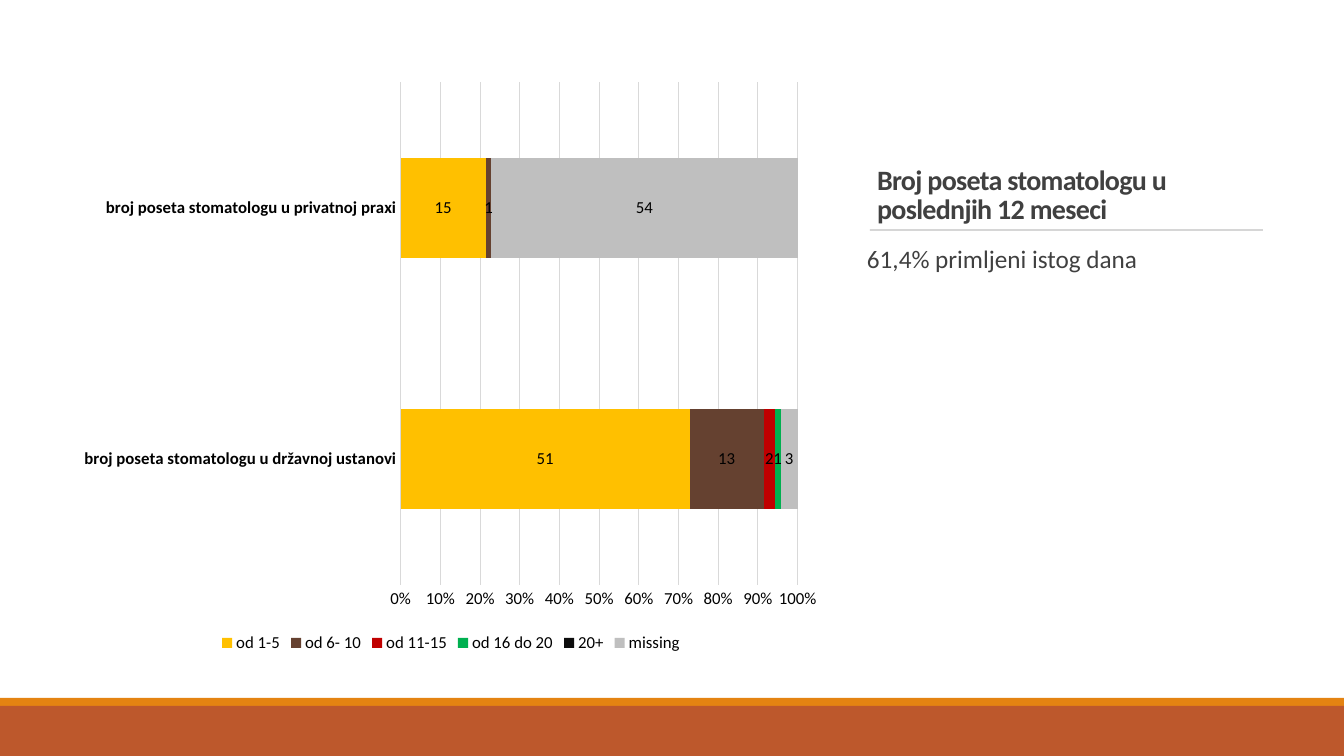
from dataclasses import dataclass
from lxml.etree import SubElement
from pptx import Presentation
from pptx.chart.data import CategoryChartData
from pptx.dml.color import RGBColor
from pptx.enum.chart import (XL_CHART_TYPE, XL_LABEL_POSITION,
                             XL_LEGEND_POSITION, XL_TICK_MARK)
from pptx.enum.shapes import MSO_CONNECTOR, MSO_SHAPE
from pptx.enum.text import MSO_ANCHOR, MSO_AUTO_SIZE, PP_ALIGN
from pptx.oxml.ns import qn
from pptx.util import Emu, Pt

# Content
TITLE = "Broj poseta stomatologu u poslednjih 12 meseci"
BODY = "61,4% primljeni istog dana"
CATS = ["broj poseta stomatologu u državnoj ustanovi",
        "broj poseta stomatologu u privatnoj praxi"]
SERIES = [
    ("od 1-5", (51, 15), "FFC000"),
    ("od 6- 10", (13, 1), "654130"),
    ("od 11-15", (2, None), "C00000"),
    ("od 16 do 20", (1, None), "00B050"),
    ("20+", (None, None), "0D0D0D"),
    ("missing", (3, 54), "BFBFBF"),
]

# Places in px: left, top, width, height
WIDE, HIGH = 1344, 756
TITLE_BOX = (867, 70, 407, 160)
BODY_BOX = (867, 242, 407, 404)
CHART_BOX = (70, 71, 762, 586)
PLOT_BOX = (401, 82, 397, 503)
RULE = (870, 230, 1263, 230)
BANDS = [(698, 8, "E48312"), (706, 50, "BD582C")]


@dataclass(frozen=True)
class Theme:
    font: str = "Calibri"
    text: str = "404040"
    label: str = "000000"
    grid: str = "D9D9D9"
    rule: str = "808080"
    title: int = 20
    body: int = 18
    small: int = 12


THEME = Theme()


def px(n):
    return Emu(round(n * 914400 / 100.8))


def rgb(code):
    return RGBColor.from_string(code)


def style(font, size, color, bold=False):
    font.name, font.size, font.bold = THEME.font, Pt(size), bold
    font.color.rgb = rgb(color)


def place(shape, box):
    shape.left, shape.top, shape.width, shape.height = map(px, box)


def write(shape, box, text, size, bold, space):
    place(shape, box)
    frame = shape.text_frame
    frame.text = text
    frame.word_wrap = True
    frame.auto_size = MSO_AUTO_SIZE.NONE
    para = frame.paragraphs[0]
    para.alignment = PP_ALIGN.LEFT
    para.line_spacing = space
    para.space_before = Pt(0)
    style(para.font, size, THEME.text, bold)
    return frame, para


def add_title(slide):
    frame, para = write(slide.shapes.title, TITLE_BOX, TITLE,
                        THEME.title, True, 0.85)
    frame.vertical_anchor = MSO_ANCHOR.BOTTOM
    para.runs[0]._r.get_or_add_rPr().set("spc", "-50")


def add_body(slide):
    frame, para = write(slide.placeholders[1], BODY_BOX, BODY,
                        THEME.body, False, 0.9)
    frame.vertical_anchor = MSO_ANCHOR.TOP
    frame.margin_left = frame.margin_right = 0
    para.space_after = Pt(6)
    props = para._p.get_or_add_pPr()
    props.set("marL", "0")
    props.set("indent", "0")
    bullet = SubElement(props, qn("a:buNone"))
    props.remove(bullet)
    props.insert_element_before(bullet, "a:tabLst", "a:defRPr", "a:extLst")


def add_rule(slide):
    rule = slide.shapes.add_connector(MSO_CONNECTOR.STRAIGHT, *map(px, RULE))
    rule.line.width = Pt(0.5)
    rule.line.color.rgb = rgb(THEME.rule)
    tint = rule.line._ln.find(".//" + qn("a:srgbClr"))
    SubElement(tint, qn("a:alpha")).set("val", "90000")
    SubElement(rule._element.spPr, qn("a:effectLst"))


def add_bands(slide):
    for top, high, color in BANDS:
        band = slide.shapes.add_shape(MSO_SHAPE.RECTANGLE,
                                      *map(px, (0, top, WIDE, high)))
        band.shadow.inherit = False
        band.fill.solid()
        band.fill.fore_color.rgb = rgb(color)
        band.line.fill.background()


def set_plot(chart):
    # Inner plot area as shares of the chart box
    left, top, wide, high = CHART_BOX
    x, y, w, h = PLOT_BOX
    area = chart._chartSpace.chart.plotArea
    old = area.find(qn("c:layout"))
    if old is not None:
        area.remove(old)
    layout = SubElement(area, qn("c:layout"))
    area.insert(0, layout)
    manual = SubElement(layout, qn("c:manualLayout"))
    for tag, val in [("layoutTarget", "inner"), ("xMode", "edge"),
                     ("yMode", "edge"), ("x", (x - left) / wide),
                     ("y", (y - top) / high), ("w", w / wide),
                     ("h", h / high)]:
        text = val if isinstance(val, str) else f"{val:.3f}"
        SubElement(manual, qn("c:" + tag)).set("val", text)


def add_chart(slide):
    data = CategoryChartData()
    data.categories = CATS
    for name, vals, _ in SERIES:
        data.add_series(name, vals)
    chart = slide.shapes.add_chart(XL_CHART_TYPE.BAR_STACKED_100,
                                   *map(px, CHART_BOX), data).chart
    chart.has_title = False
    style(chart.font, THEME.small, THEME.label)
    set_plot(chart)

    # Bars and values
    plot = chart.plots[0]
    plot.gap_width, plot.overlap = 150, 100
    plot.vary_by_categories = False
    for bar, (_, _, color) in zip(plot.series, SERIES):
        bar.format.fill.solid()
        bar.format.fill.fore_color.rgb = rgb(color)
        labels = bar.data_labels
        labels.show_value = True
        labels.position = XL_LABEL_POSITION.CENTER
        style(labels.font, THEME.small, THEME.label)

    # Axes
    cat, val = chart.category_axis, chart.value_axis
    for axis in (cat, val):
        axis.major_tick_mark = axis.minor_tick_mark = XL_TICK_MARK.NONE
        style(axis.tick_labels.font, THEME.small, THEME.label, axis is cat)
    val.has_major_gridlines = True
    for line in (cat.format.line, val.major_gridlines.format.line):
        line.color.rgb = rgb(THEME.grid)
        line.width = Pt(0.75)
    val.format.line.fill.background()
    val.tick_labels.number_format = "0%"
    val.tick_labels.number_format_is_linked = False

    # Legend
    chart.has_legend = True
    chart.legend.position = XL_LEGEND_POSITION.BOTTOM
    chart.legend.include_in_layout = False
    style(chart.legend.font, THEME.small, THEME.label)


def main():
    deck = Presentation()
    deck.slide_width, deck.slide_height = px(WIDE), px(HIGH)
    slide = deck.slides.add_slide(deck.slide_layouts[1])
    add_title(slide)
    add_rule(slide)
    add_body(slide)
    add_bands(slide)
    add_chart(slide)
    deck.save("out.pptx")


if __name__ == "__main__":
    main()
